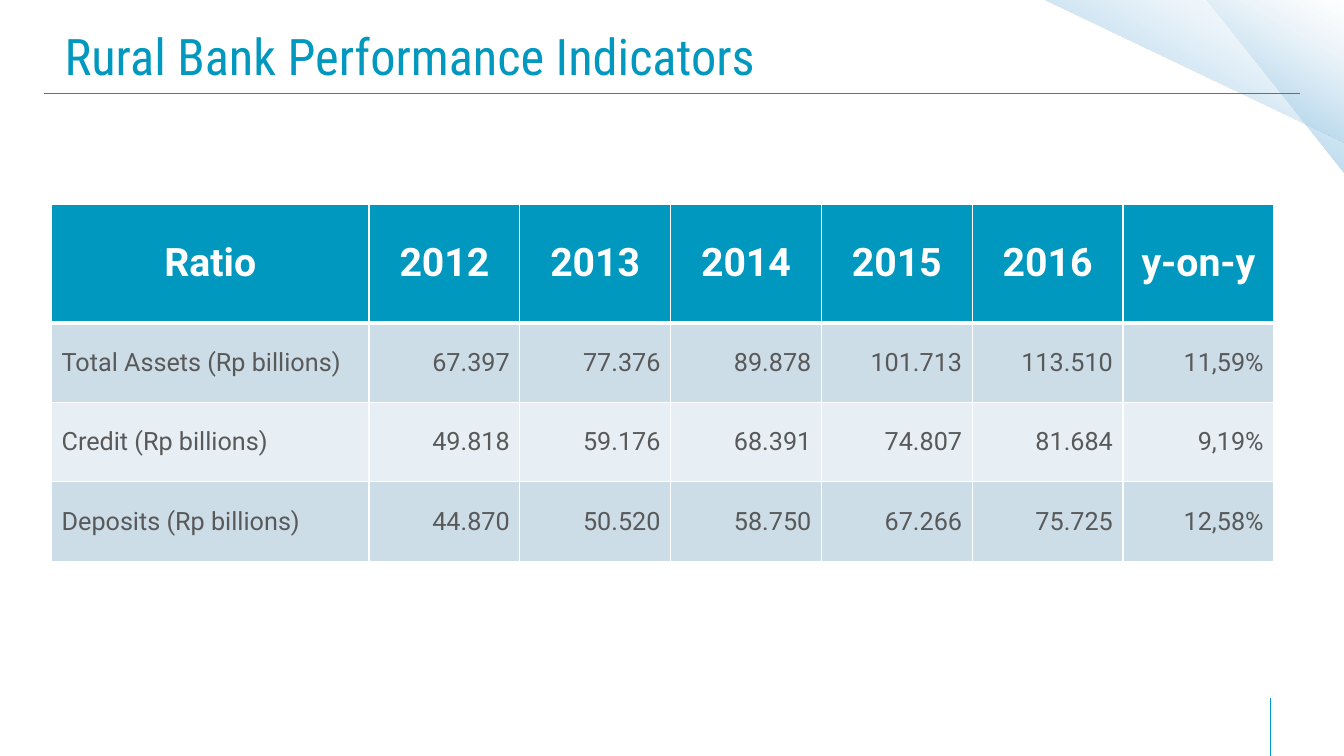
from lxml import etree
from pptx import Presentation
from pptx.dml.color import RGBColor
from pptx.enum.shapes import MSO_CONNECTOR, MSO_SHAPE
from pptx.enum.text import MSO_ANCHOR, MSO_AUTO_SIZE, PP_ALIGN
from pptx.oxml import parse_xml
from pptx.oxml.ns import qn
from pptx.util import Cm, Pt

LEFT, CENTER, RIGHT = PP_ALIGN.LEFT, PP_ALIGN.CENTER, PP_ALIGN.RIGHT
MIDDLE = MSO_ANCHOR.MIDDLE
STRAIGHT = MSO_CONNECTOR.STRAIGHT
RIGHT_TRIANGLE = MSO_SHAPE.RIGHT_TRIANGLE
NO_AUTOFIT = MSO_AUTO_SIZE.NONE
TITLE_ONLY = 5

TEAL, WHITE, GREY = "0098BF", "FFFFFF", "595959"
BANDS = ("CCDDE8", "E7EFF4")
# Position, colour and opacity, all in percent except the colour
GRADIENT_STOPS = ((0, "8FC8E8", 100), (50, "A4CEE9", 44), (100, "DEEDF6", 0))
DRAWING = "http://schemas.openxmlformats.org/drawingml/2006/main"

INDICATORS = (
    ("Ratio", "2012", "2013", "2014", "2015", "2016", "y-on-y"),
    ("Total Assets (Rp billions)", "67.397", "77.376", "89.878", "101.713", "113.510", "11,59%"),
    ("Credit (Rp billions)", "49.818", "59.176", "68.391", "74.807", "81.684", "9,19%"),
    ("Deposits (Rp billions)", "44.870", "50.520", "58.750", "67.266", "75.725", "12,58%"),
)


def color(hex_string):
    return RGBColor.from_string(hex_string)


def format_text(text_frame, font_name, size, hex_color, alignment, bold=False):
    for paragraph in text_frame.paragraphs:
        paragraph.alignment = alignment
        for run in paragraph.runs:
            run.font.name = font_name
            run.font.size = Pt(size)
            run.font.bold = bold
            run.font.color.rgb = color(hex_color)


def add_corner_triangle(slide, left, width, height):
    """Add a fading triangle with its right angle at the top right."""
    shape = slide.shapes.add_shape(RIGHT_TRIANGLE, left, 0, width, height)
    shape.rotation = 180
    shape.shadow.inherit = False
    shape.line.fill.background()
    stops = "".join(
        f'<a:gs pos="{position * 1000}"><a:srgbClr val="{hex_color}">'
        f'<a:alpha val="{opacity * 1000}"/></a:srgbClr></a:gs>'
        for position, hex_color, opacity in GRADIENT_STOPS
    )
    gradient = parse_xml(
        f'<a:gradFill xmlns:a="{DRAWING}" rotWithShape="1"><a:gsLst>{stops}</a:gsLst>'
        '<a:lin ang="7200000" scaled="0"/></a:gradFill>'
    )
    shape.element.spPr.find(qn("a:prstGeom")).addnext(gradient)


def add_rule(slide, start_x, start_y, end_x, end_y):
    connector = slide.shapes.add_connector(STRAIGHT, start_x, start_y, end_x, end_y)
    connector.line.color.rgb = color(TEAL)
    connector.line.width = Pt(1)
    etree.SubElement(connector.element.spPr, qn("a:effectLst"))


def set_title(slide, text):
    title = slide.shapes.title
    title.left, title.top, title.width, title.height = Cm(1.17), Cm(0.36), Cm(31.01), Cm(2.08)
    frame = title.text_frame
    frame.text = text
    frame.word_wrap = True
    frame.auto_size = NO_AUTOFIT
    frame.vertical_anchor = MIDDLE
    frame.margin_left = frame.margin_right = Cm(0.46)
    frame.margin_top = frame.margin_bottom = Cm(0.23)
    format_text(frame, "Roboto Condensed", 36, TEAL, LEFT)
    slide.shapes.element.append(title.element)  # bring in front of the triangles


def set_borders(cell, top, bottom):
    """Draw white borders; top and bottom widths are in points."""
    properties = cell._tc.get_or_add_tcPr()
    for side, width in (("L", 1), ("R", 1), ("T", top), ("B", bottom)):
        line = etree.SubElement(properties, qn(f"a:ln{side}"), w=str(Pt(width)))
        fill = etree.SubElement(line, qn("a:solidFill"))
        etree.SubElement(fill, qn("a:srgbClr"), val=WHITE)


def fill_cell(cell, text, row, column):
    is_header = row == 0
    cell.text = text
    cell.vertical_anchor = MIDDLE
    set_borders(cell, 3 if row == 1 else 1, 3 if is_header else 1)
    cell.fill.solid()
    cell.fill.fore_color.rgb = color(TEAL if is_header else BANDS[(row - 1) % 2])
    if is_header:
        format_text(cell.text_frame, "Roboto", 28, WHITE, CENTER, bold=True)
    else:
        format_text(cell.text_frame, "Roboto", 18, GREY, RIGHT if column else LEFT)


def add_indicator_table(slide):
    row_count, column_count = len(INDICATORS), len(INDICATORS[0])
    table = slide.shapes.add_table(
        row_count, column_count, Cm(1.3), Cm(5.14), Cm(30.8), Cm(9)
    ).table
    for index, column in enumerate(table.columns):
        column.width = Cm(3.8 if index else 8)
    for index, row in enumerate(table.rows):
        row.height = Cm(2 if index else 3)
    for row, texts in enumerate(INDICATORS):
        for column, text in enumerate(texts):
            fill_cell(table.cell(row, column), text, row, column)


def main():
    presentation = Presentation()
    presentation.slide_width, presentation.slide_height = Cm(33.87), Cm(19.05)
    slide = presentation.slides.add_slide(presentation.slide_layouts[TITLE_ONLY])

    add_corner_triangle(slide, Cm(30.41), Cm(3.46), Cm(4.34))
    add_corner_triangle(slide, Cm(26.3), Cm(7.59), Cm(3.6))
    add_rule(slide, Cm(1.12), Cm(2.36), Cm(32.75), Cm(2.36))
    add_rule(slide, Cm(32.02), Cm(19.05), Cm(32.02), Cm(17.6))
    set_title(slide, "Rural Bank Performance Indicators")
    add_indicator_table(slide)

    presentation.save("out.pptx")


if __name__ == "__main__":
    main()
